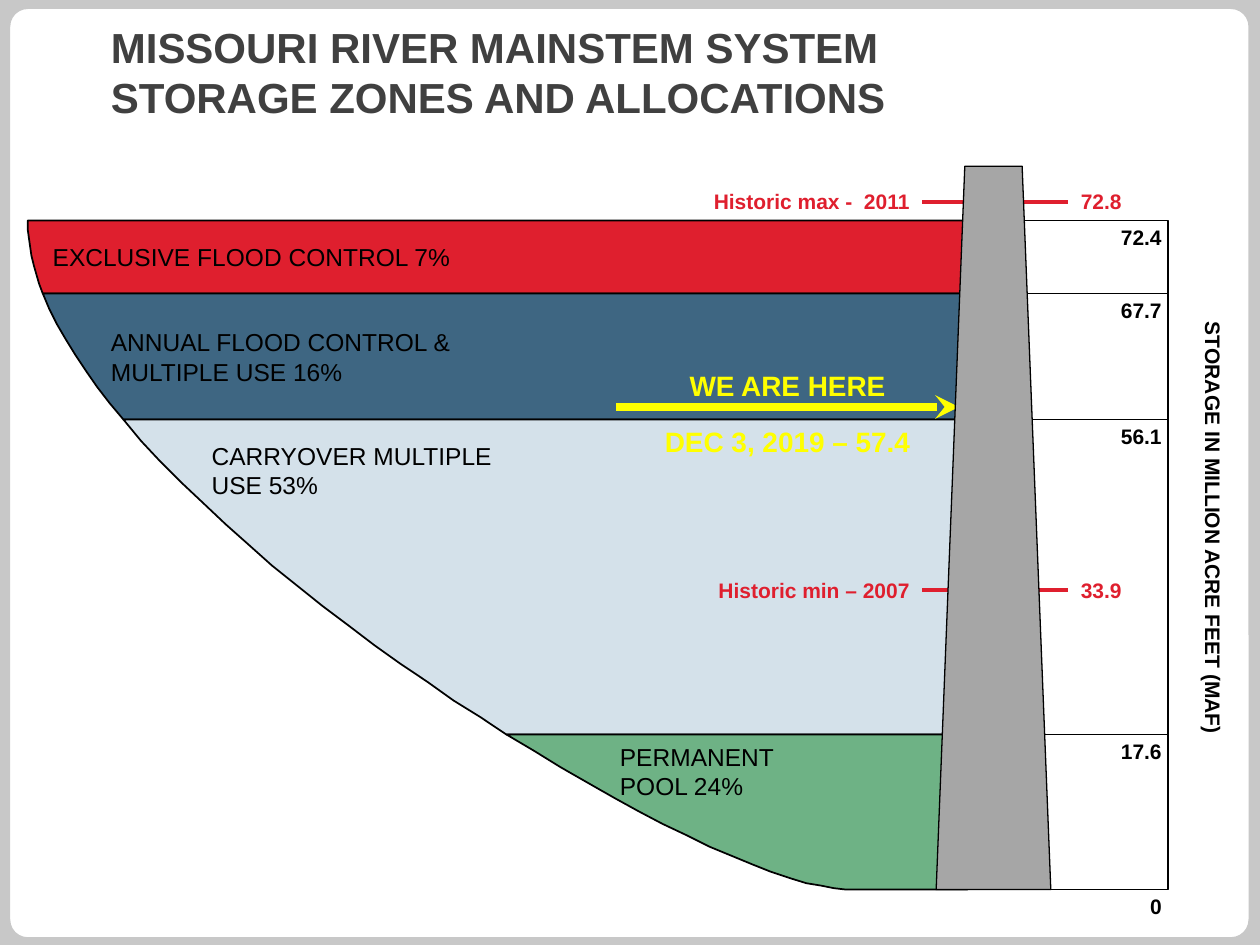
from lxml import etree
from pptx import Presentation
from pptx.dml.color import RGBColor
from pptx.enum.shapes import MSO_CONNECTOR, MSO_SHAPE
from pptx.enum.text import MSO_ANCHOR, MSO_AUTO_SIZE, PP_ALIGN
from pptx.oxml.ns import qn
from pptx.util import Inches, Pt

LEFT, CENTER, RIGHT = PP_ALIGN.LEFT, PP_ALIGN.CENTER, PP_ALIGN.RIGHT
TOP, MIDDLE = MSO_ANCHOR.TOP, MSO_ANCHOR.MIDDLE
STRAIGHT = MSO_CONNECTOR.STRAIGHT
NO_AUTOSIZE = MSO_AUTO_SIZE.NONE
RECTANGLE, ROUNDED, TRAPEZOID = (
    MSO_SHAPE.RECTANGLE, MSO_SHAPE.ROUNDED_RECTANGLE, MSO_SHAPE.TRAPEZOID)

BLACK, WHITE, RED, YELLOW = "000000", "FFFFFF", "DF1F2E", "FFFF00"
PAGE_GRAY, TITLE_GRAY, DAM_GRAY = "C8C8C8", "404040", "A6A6A6"
DEFAULT_MARGINS = (0.1, 0.05, 0.1, 0.05)
SCALE_MARGINS = (0.05, 0.03, 0.05, 0)

LEVELS = [0, 0.58, 1.58, 4.08, 5.31]
STORAGE = ["72.4", "67.7", "56.1", "17.6"]
ZONES = [
    ("EXCLUSIVE FLOOD CONTROL 7%", RED, MIDDLE, (0.1, 0.03, 0.06, 0.03), 0.1),
    ("ANNUAL FLOOD CONTROL &\nMULTIPLE USE 16%", "3E6682", MIDDLE,
     (0.4, 0.03, 0.06, 0.03), 0.14),
    ("CARRYOVER MULTIPLE\nUSE 53%", "D4E1EA", TOP, (0.7, 0.17, 0.06, 0.03), 0),
    ("PERMANENT\nPOOL 24%", "6EB285", TOP, (0.9, 0.06, 0.06, 0.03), 0),
]
BANK = [
    (0, 0), (0, 0.07), (0.01, 0.14), (0.02, 0.21), (0.03, 0.28), (0.05, 0.36),
    (0.07, 0.43), (0.09, 0.5), (0.12, 0.58), (0.17, 0.7), (0.23, 0.82),
    (0.3, 0.94), (0.38, 1.07), (0.46, 1.19), (0.55, 1.32), (0.65, 1.45),
    (0.76, 1.58), (0.9, 1.75), (1.05, 1.91), (1.22, 2.08), (1.39, 2.24),
    (1.57, 2.41), (1.75, 2.57), (1.94, 2.74), (2.14, 2.9), (2.34, 3.06),
    (2.54, 3.21), (2.75, 3.37), (2.96, 3.52), (3.17, 3.66), (3.38, 3.81),
    (3.59, 3.94), (3.8, 4.08), (4.02, 4.21), (4.23, 4.34), (4.44, 4.46),
    (4.65, 4.58), (4.85, 4.69), (5.04, 4.79), (5.23, 4.88), (5.41, 4.97),
    (5.58, 5.04), (5.75, 5.11), (5.9, 5.17), (6.05, 5.22), (6.18, 5.26),
    (6.3, 5.28), (6.4, 5.3), (6.49, 5.31),
]


def color(value):
    return RGBColor.from_string(value)


def lengths(box):
    return [Inches(value) for value in box]


def paint(shape, fill, line=BLACK, width=1):
    shape.shadow.inherit = False
    shape.fill.solid()
    shape.fill.fore_color.rgb = color(fill)
    shape.line.color.rgb = color(line)
    shape.line.width = Pt(width)


def write(shape, text, size=12, ink=BLACK, bold=True, align=LEFT, anchor=TOP,
          margins=DEFAULT_MARGINS, wrap=True, indent=0):
    frame = shape.text_frame
    frame.text = text
    frame.word_wrap = wrap
    frame.auto_size = NO_AUTOSIZE
    frame.vertical_anchor = anchor
    (frame.margin_left, frame.margin_top,
     frame.margin_right, frame.margin_bottom) = lengths(margins)
    for paragraph in frame.paragraphs:
        paragraph.alignment = align
        if indent:
            properties = paragraph._p.get_or_add_pPr()
            properties.set("marL", str(Inches(indent)))
            properties.set("indent", "0")
        for run in paragraph.runs:
            run.font.name = "Arial"
            run.font.size = Pt(size)
            run.font.bold = bold
            run.font.color.rgb = color(ink)


def add_label(slide, box, text, **style):
    label = slide.shapes.add_textbox(*lengths(box))
    write(label, text, **style)
    return label


def add_line(slide, ends, ink, width):
    line = slide.shapes.add_connector(STRAIGHT, *lengths(ends))
    line.line.color.rgb = color(ink)
    line.line.width = Pt(width)
    etree.SubElement(line._element.spPr, qn("a:effectLst"))
    return line


def add_page(slide, box):
    slide.background.fill.solid()
    slide.background.fill.fore_color.rgb = color(PAGE_GRAY)
    page = slide.shapes.add_shape(ROUNDED, *lengths(box))
    page.adjustments[0] = 0.023
    paint(page, WHITE, PAGE_GRAY, 4.5)
    slide.shapes._spTree.insert(2, page._element)


def add_title(slide, box):
    title = slide.shapes.title
    title.left, title.top, title.width, title.height = lengths(box)
    write(title, "MISSOURI RIVER MAINSTEM SYSTEM\vSTORAGE ZONES AND ALLOCATIONS",
          size=24, ink=TITLE_GRAY, anchor=MIDDLE)


def add_storage_scale(slide, left, top, width):
    style = dict(align=RIGHT, margins=SCALE_MARGINS, wrap=False)
    for value, upper, lower in zip(STORAGE, LEVELS, LEVELS[1:]):
        box = (left, top + upper, width, lower - upper)
        step = slide.shapes.add_shape(RECTANGLE, *lengths(box))
        paint(step, WHITE)
        write(step, value, **style)
    add_label(slide, (left, top + LEVELS[-1], width, 0.19), "0", **style)
    axis = add_label(slide, (9.38, 1.32, 0.4, 5.74),
                     "STORAGE IN MILLION ACRE FEET (MAF)", align=CENTER)
    axis.text_frame._txBody.bodyPr.set("vert", "vert")


def add_reservoir(slide, left, top, width):
    for zone, upper, lower in zip(ZONES, LEVELS, LEVELS[1:]):
        text, fill, anchor, margins, indent = zone
        outline = [point for point in BANK if upper <= point[1] <= lower]
        outline += [(width, lower), (width, upper)]
        corners = [lengths((left + x, top + y)) for x, y in outline]
        builder = slide.shapes.build_freeform(*corners[0])
        builder.add_line_segments(corners[1:], close=True)
        shape = builder.convert_to_shape()
        paint(shape, fill)
        write(shape, text, size=14, bold=False, anchor=anchor,
              margins=margins, indent=indent)


def add_record(slide, left, top, width, text, value):
    style = dict(ink=RED, anchor=MIDDLE, wrap=False)
    line_end = left + width
    add_label(slide, (left - 1.77, top, 1.77, 0.3), text, align=RIGHT, **style)
    add_label(slide, (line_end, top, 0.53, 0.3), value, **style)
    middle = top + 0.155
    add_line(slide, (left, middle, line_end, middle), RED, 2.25)


def add_current_level(slide, left, top, width, height):
    middle = top + 0.49
    arrow = add_line(slide, (left, middle, left + width, middle), YELLOW, 4.5)
    etree.SubElement(arrow.line._get_or_add_ln(), qn("a:tailEnd"), type="stealth")
    label = add_label(slide, (left, top, width, height),
                      "WE ARE HERE\nDEC 3, 2019 – 57.4", size=16, ink=YELLOW,
                      align=CENTER, anchor=MIDDLE)
    for paragraph in label.text_frame.paragraphs:
        paragraph.line_spacing = 1.5
        paragraph.space_after = Pt(3.4)


def add_dam(slide, box):
    dam = slide.shapes.add_shape(TRAPEZOID, *lengths(box))
    dam.adjustments[0] = 0.25
    paint(dam, DAM_GRAY, width=0.75)


def main():
    presentation = Presentation()
    presentation.slide_width, presentation.slide_height = Inches(10), Inches(7.5)
    slide = presentation.slides.add_slide(presentation.slide_layouts[5])
    add_page(slide, (0.05, 0.04, 9.89, 7.43))
    add_title(slide, (0.78, 0.14, 8.35, 0.86))
    add_storage_scale(slide, 6.95, 1.75, 2.32)
    add_reservoir(slide, 0.22, 1.75, 7.46)
    add_record(slide, 7.32, 1.45, 1.16, "Historic max -  2011", "72.8")
    add_record(slide, 7.32, 4.53, 1.16, "Historic min – 2007", "33.9")
    add_current_level(slide, 4.89, 2.74, 2.72, 0.95)
    add_dam(slide, (7.43, 1.32, 0.91, 5.74))
    presentation.save("out.pptx")


if __name__ == "__main__":
    main()
